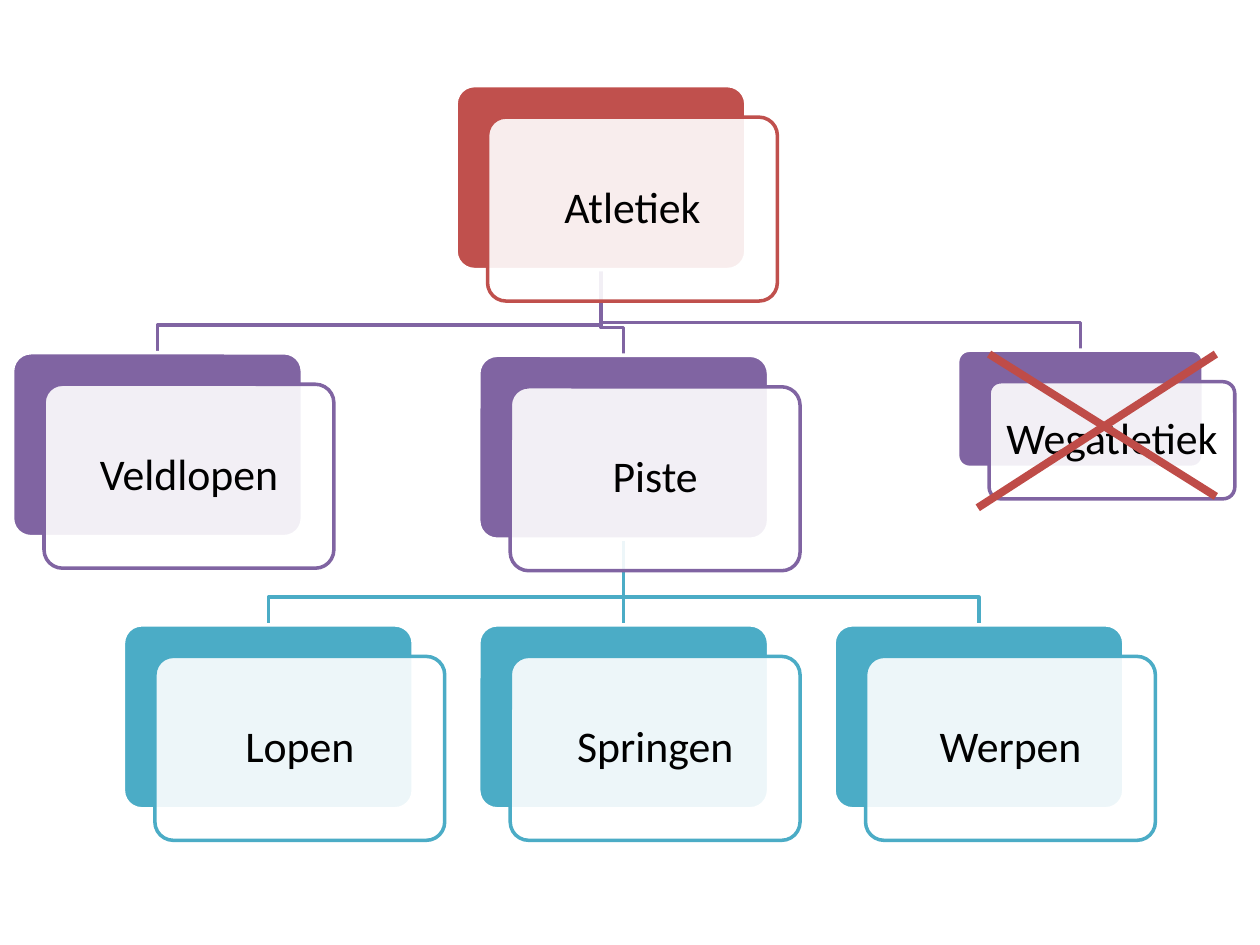
import pptx
import pptx.dml.color
import pptx.enum.shapes
import pptx.enum.text
import pptx.util
from lxml import etree
from pptx.oxml.ns import qn
from pptx.util import Inches, Pt

RED, PURPLE, TEAL, CROSS_RED = "C0504D", "8064A2", "4BACC6", "BF4C48"
WHITE, BLACK = "FFFFFF", "000000"
CARD_WIDTH, CARD_HEIGHT = 2.3, 1.46
CARD_OFFSET = 0.25
BEND_GAP = 0.22

# name: left, top, width, height, colour, parent
cards = {
    "Atletiek": (3.62, 0.68, CARD_WIDTH, CARD_HEIGHT, RED, None),
    "Veldlopen": (0.1, 2.8, CARD_WIDTH, CARD_HEIGHT, PURPLE, "Atletiek"),
    "Piste": (3.8, 2.82, CARD_WIDTH, CARD_HEIGHT, PURPLE, "Atletiek"),
}
for column, discipline in enumerate(["Lopen", "Springen", "Werpen"]):
    cards[discipline] = (0.98 + 2.82 * column, 4.96, CARD_WIDTH, CARD_HEIGHT, TEAL, "Piste")
cards["Wegatletiek"] = (7.6, 2.78, 1.95, 0.93, PURPLE, "Atletiek")


def rgb(hex_colour):
    return pptx.dml.color.RGBColor.from_string(hex_colour)


def add_line(start, end, colour, width):
    """Add a straight line without a shadow; start and end are (x, y) in inches."""
    line = slide.shapes.add_connector(
        pptx.enum.shapes.MSO_CONNECTOR.STRAIGHT, *map(Inches, start + end))
    line.line.color.rgb = rgb(colour)
    line.line.width = Pt(width)
    etree.SubElement(line._element.spPr, qn("a:effectLst"))


presentation = pptx.Presentation()
presentation.slide_width, presentation.slide_height = Inches(10), Inches(7.5)
slide = presentation.slides.add_slide(presentation.slide_layouts[6])

# Branches from each parent to its children, behind the cards
for left, top, width, height, colour, parent in reversed(list(cards.values())):
    if parent is None:
        continue
    parent_left, parent_top, parent_width, parent_height = cards[parent][:4]
    start_x, start_y = parent_left + parent_width / 2, parent_top + parent_height
    end_x, bend_y = left + width / 2, top - BEND_GAP
    if abs(end_x - start_x) < 0.01:
        add_line((start_x, start_y), (start_x, top), colour, 2)
        continue
    builder = slide.shapes.build_freeform(Inches(start_x), Inches(start_y))
    corners = [(start_x, bend_y), (end_x, bend_y), (end_x, top)]
    builder.add_line_segments([(Inches(x), Inches(y)) for x, y in corners], close=False)
    branch = builder.convert_to_shape()
    branch.shadow.inherit = False
    branch.fill.background()
    branch.line.color.rgb = rgb(colour)
    branch.line.width = Pt(2)

# Each card is a coloured back and a translucent white front with the name
for name, (left, top, width, height, colour, parent) in cards.items():
    for offset, fill, outline in [(0, colour, WHITE), (CARD_OFFSET, WHITE, colour)]:
        card = slide.shapes.add_shape(
            pptx.enum.shapes.MSO_SHAPE.ROUNDED_RECTANGLE,
            Inches(left + offset), Inches(top + offset), Inches(width), Inches(height))
        card.adjustments[0] = 0.1
        card.shadow.inherit = False
        card.fill.solid()
        card.fill.fore_color.rgb = rgb(fill)
        card.line.color.rgb = rgb(outline)
        card.line.width = Pt(2)

    front_colour = card._element.spPr.find(qn("a:solidFill")).find(qn("a:srgbClr"))
    etree.SubElement(front_colour, qn("a:alpha"), val="90000")

    frame = card.text_frame
    frame.word_wrap = True
    frame.vertical_anchor = pptx.enum.text.MSO_ANCHOR.MIDDLE
    frame.margin_left = frame.margin_right = Inches(0.1)
    frame.margin_top = frame.margin_bottom = Inches(0.1)
    paragraph = frame.paragraphs[0]
    paragraph.alignment = pptx.enum.text.PP_ALIGN.CENTER
    paragraph.line_spacing = 0.9
    run = paragraph.add_run()
    run.text = name
    run.font.name = "Calibri"
    run.font.size = Pt(25)
    run.font.color.rgb = rgb(BLACK)

# Cross over Wegatletiek
add_line((7.76, 4.03), (9.65, 2.81), CROSS_RED, 4.5)
add_line((7.85, 2.81), (9.65, 3.94), CROSS_RED, 4.5)

presentation.save("out.pptx")
